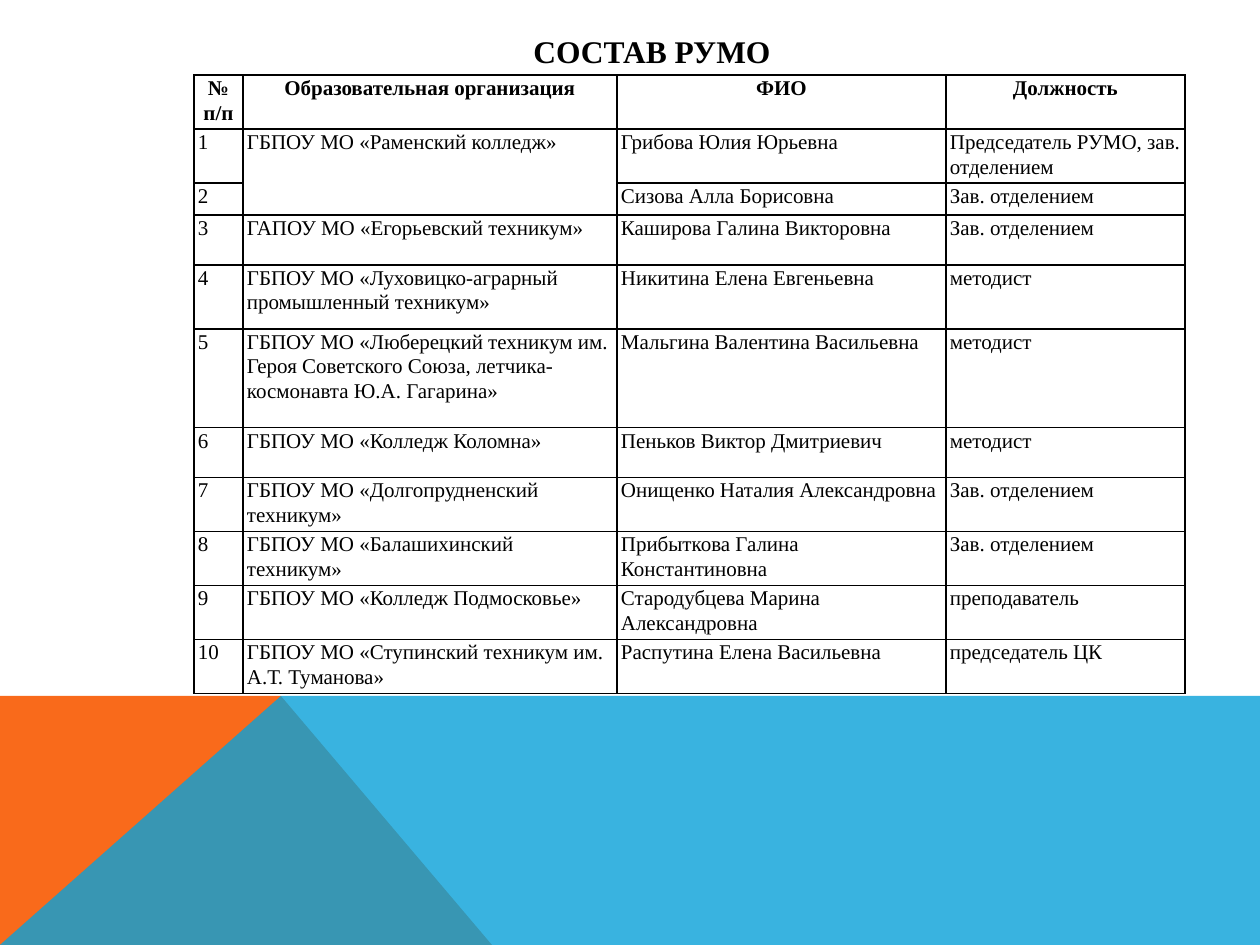
from dataclasses import dataclass
from lxml.etree import SubElement
from pptx import Presentation
from pptx.dml.color import RGBColor
from pptx.enum.text import MSO_ANCHOR, PP_ALIGN
from pptx.oxml.ns import qn
from pptx.util import Pt

PX = 7257


@dataclass(frozen=True)
class Theme:
    ink: str = "000000"
    orange: str = "F96A1B"
    blue: str = "08A1D9"
    blue_opacity: int = 80
    font: str = "Times New Roman"
    title_size: int = 18
    table_size: int = 12
    border: int = 1


THEME = Theme()

TITLE = "СОСТАВ РУМО"
TITLE_BOX = (164, 26, 976, 49)
TABLE_ORIGIN = (194, 75)
COLUMN_WIDTHS = [49, 374, 329, 239]
ROW_HEIGHTS = [50, 52, 32, 50, 64, 99, 50, 52, 52, 52, 51]
HEADER = ("№\nп/п", "Образовательная организация", "ФИО", "Должность")
MEMBERS = [
    ("ГБПОУ МО «Раменский колледж»", "Грибова Юлия Юрьевна", "Председатель РУМО, зав. отделением"),
    ("", "Сизова Алла Борисовна", "Зав. отделением"),
    ("ГАПОУ МО «Егорьевский техникум»", "Каширова Галина Викторовна", "Зав. отделением"),
    ("ГБПОУ МО «Луховицко-аграрный промышленный техникум»", "Никитина Елена Евгеньевна", "методист"),
    ("ГБПОУ МО «Люберецкий техникум им. Героя Советского Союза, летчика-космонавта Ю.А. Гагарина»",
     "Мальгина Валентина Васильевна", "методист"),
    ("ГБПОУ МО «Колледж Коломна»", "Пеньков Виктор Дмитриевич", "методист"),
    ("ГБПОУ МО «Долгопрудненский техникум»", "Онищенко Наталия Александровна", "Зав. отделением"),
    ("ГБПОУ МО «Балашихинский техникум»", "Прибыткова Галина Константиновна", "Зав. отделением"),
    ("ГБПОУ МО «Колледж Подмосковье»", "Стародубцева Марина Александровна", "преподаватель"),
    ("ГБПОУ МО «Ступинский техникум им. А.Т. Туманова»", "Распутина Елена Васильевна", "председатель ЦК"),
]
BANDS = [
    ([(0, 945), (0, 696), (281, 696), (492, 945)], THEME.orange, 100),
    ([(0, 945), (281, 696), (1260, 696), (1260, 945)], THEME.blue, THEME.blue_opacity),
]


def emu(*lengths):
    return [length * PX for length in lengths]


def style_text(frame, size, bold, align, spacing=None):
    for para in frame.paragraphs:
        para.alignment = align
        para.line_spacing = spacing
        para.font.name = THEME.font
        para.font.size = Pt(size)
        para.font.bold = bold
        para.font.color.rgb = RGBColor.from_string(THEME.ink)


def add_band(page, points, color, opacity):
    builder = page.shapes.build_freeform(*points[0], scale=PX)
    builder.add_line_segments(points[1:], close=True)
    band = builder.convert_to_shape()
    band.shadow.inherit = False
    band.line.fill.background()
    band.fill.solid()
    band.fill.fore_color.rgb = RGBColor.from_string(color)
    if opacity < 100:
        tint = band.fill._xPr.find(".//" + qn("a:srgbClr"))
        SubElement(tint, qn("a:alpha"), val=str(opacity * 1000))


def add_title(page):
    box = page.shapes.add_textbox(*emu(*TITLE_BOX))
    frame = box.text_frame
    frame.word_wrap = True
    frame.vertical_anchor = MSO_ANCHOR.MIDDLE
    frame.text = TITLE
    style_text(frame, THEME.title_size, True, PP_ALIGN.CENTER)


def set_borders(cell):
    properties = cell._tc.get_or_add_tcPr()
    for index, side in enumerate(("lnL", "lnR", "lnT", "lnB")):
        line = properties.makeelement(qn("a:" + side), {"w": str(Pt(THEME.border))})
        properties.insert(index, line)
        fill = SubElement(line, qn("a:solidFill"))
        SubElement(fill, qn("a:srgbClr"), val=THEME.ink)


def add_members_table(page):
    rows = [HEADER] + [(str(number), *member) for number, member in enumerate(MEMBERS, 1)]
    size = (sum(COLUMN_WIDTHS), sum(ROW_HEIGHTS))
    table = page.shapes.add_table(len(rows), len(HEADER), *emu(*TABLE_ORIGIN, *size)).table
    table.first_row = False
    table.horz_banding = False
    for column, width in zip(table.columns, COLUMN_WIDTHS):
        column.width = width * PX
    for row, height in zip(table.rows, ROW_HEIGHTS):
        row.height = height * PX
    for row_index, values in enumerate(rows):
        is_header = row_index == 0
        align = PP_ALIGN.CENTER if is_header else PP_ALIGN.LEFT
        for column_index, value in enumerate(values):
            cell = table.cell(row_index, column_index)
            cell.text = value
            cell.margin_left = cell.margin_right = 4 * PX
            cell.margin_top = cell.margin_bottom = 0
            cell.fill.background()
            set_borders(cell)
            style_text(cell.text_frame, THEME.table_size, is_header, align, 1.07)
    table.cell(1, 1).merge(table.cell(2, 1))


def main():
    deck = Presentation()
    deck.slide_width, deck.slide_height = emu(1260, 945)
    page = deck.slides.add_slide(deck.slide_layouts[6])
    for band in BANDS:
        add_band(page, *band)
    add_title(page)
    add_members_table(page)
    deck.save("out.pptx")


if __name__ == "__main__":
    main()
